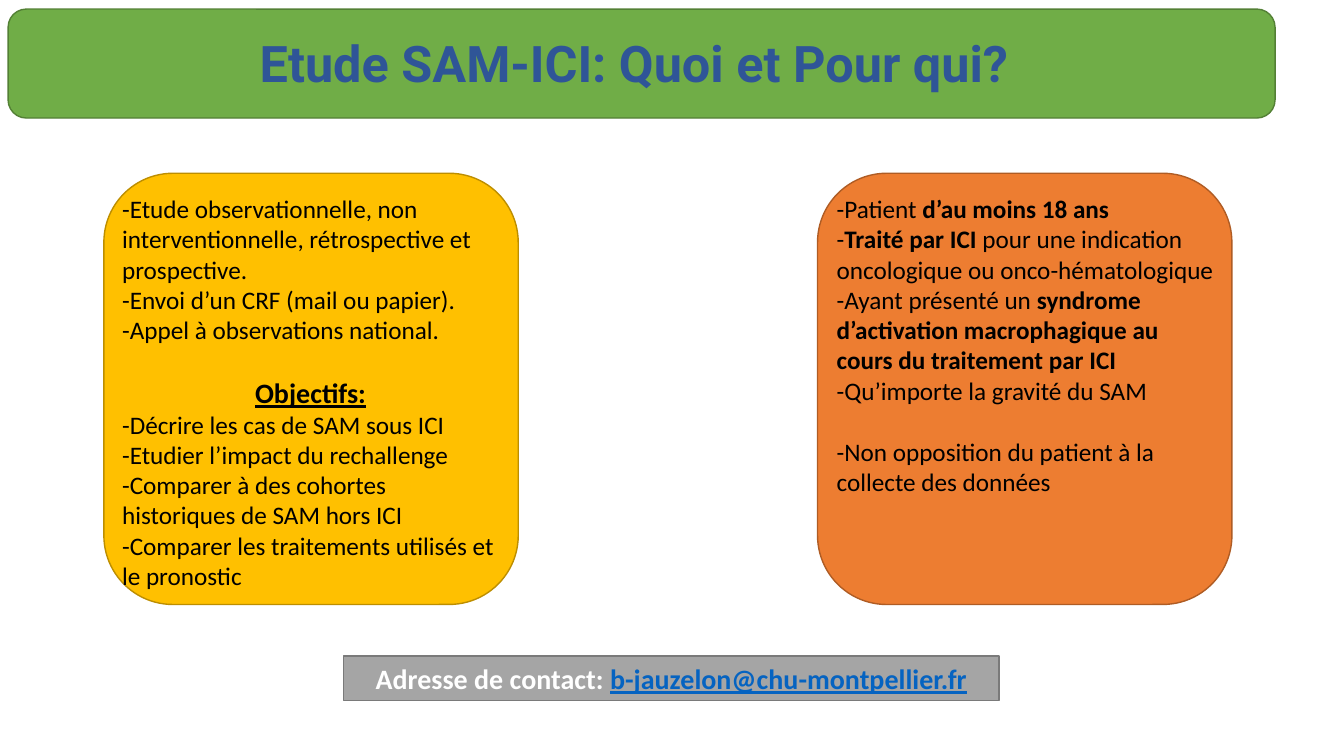
from dataclasses import dataclass

from lxml import etree
from pptx import Presentation, util as u
from pptx.dml.color import RGBColor
from pptx.enum import shapes, text
from pptx.oxml import ns

BLACK = RGBColor(0x00, 0x00, 0x00)
WHITE = RGBColor(0xFF, 0xFF, 0xFF)
TITLE_BLUE = RGBColor(0x2F, 0x55, 0x97)
LINK_BLUE = RGBColor(0x05, 0x63, 0xC1)
GREEN, GREEN_EDGE = RGBColor(0x70, 0xAD, 0x47), RGBColor(0x53, 0x80, 0x35)
YELLOW, YELLOW_EDGE = RGBColor(0xFF, 0xC0, 0x00), RGBColor(0xBD, 0x8E, 0x00)
ORANGE, ORANGE_EDGE = RGBColor(0xED, 0x7D, 0x31), RGBColor(0xAF, 0x5C, 0x24)
GREY, GREY_EDGE = RGBColor(0xA5, 0xA5, 0xA5), RGBColor(0x7A, 0x7A, 0x7A)
CARD_TOP, CARD_WIDTH, CARD_HEIGHT = 123.8, 296, 308
SECTION_GAP = 22


@dataclass(frozen=True)
class Line:
    """One paragraph; every second part of its text, split at *, is bold."""
    marked: str
    size: float = 18
    heading: bool = False
    gap: float = 0


@dataclass(frozen=True)
class Card:
    left: float
    text_left: float
    text_width: float
    fill: RGBColor
    edge: RGBColor
    lines: tuple[Line, ...]


CARDS = (
    Card(74.2, 80, 283.7, YELLOW, YELLOW_EDGE, (
        Line("-Etude observationnelle, non interventionnelle, rétrospective et prospective."),
        Line("-Envoi d’un CRF (mail ou papier)."),
        Line("-Appel à observations national."),
        Line("*Objectifs:*", size=20, heading=True, gap=SECTION_GAP),
        Line("-Décrire les cas de SAM sous ICI"),
        Line("-Etudier l’impact du rechallenge"),
        Line("-Comparer à des cohortes historiques de SAM hors ICI"),
        Line("-Comparer les traitements utilisés et le pronostic"),
    )),
    Card(584, 590.4, 288.7, ORANGE, ORANGE_EDGE, (
        Line("-Patient *d’au moins 18 ans*"),
        Line("-*Traité par ICI *pour une indication oncologique ou onco-hématologique"),
        Line("-Ayant présenté un *syndrome d’activation macrophagique au cours "
             "du traitement par ICI*"),
        Line("-Qu’importe la gravité du SAM"),
        Line("-Non opposition du patient à la collecte des données", gap=SECTION_GAP),
    )),
)


def write(paragraph, words: str, *, size: float = 18, color: RGBColor = BLACK,
          font: str = "Calibri", bold: bool = False, underline: bool = False) -> None:
    run = paragraph.add_run()
    run.text = words
    run.font.name = font
    run.font.size = u.Pt(size)
    run.font.color.rgb = color
    run.font.bold = bold
    run.font.underline = underline


def add_panel(slide, kind, left: float, top: float, width: float, height: float,
              fill: RGBColor, edge: RGBColor):
    panel = slide.shapes.add_shape(kind, u.Pt(left), u.Pt(top), u.Pt(width), u.Pt(height))
    panel.shadow.inherit = False
    panel.fill.solid()
    panel.fill.fore_color.rgb = fill
    panel.line.color.rgb = edge
    panel.line.width = u.Pt(1)
    return panel


def place(placeholder, left: float, top: float, width: float, height: float):
    """Move a placeholder to its box, in front of the panels drawn so far."""
    placeholder.left, placeholder.top = u.Pt(left), u.Pt(top)
    placeholder.width, placeholder.height = u.Pt(width), u.Pt(height)
    placeholder.element.getparent().append(placeholder.element)
    frame = placeholder.text_frame
    frame.word_wrap = True
    frame.auto_size = text.MSO_AUTO_SIZE.NONE
    return frame


def remove_bullet(paragraph) -> None:
    properties = paragraph._p.get_or_add_pPr()
    properties.set("marL", "0")
    properties.set("indent", "0")
    etree.SubElement(properties, ns.qn("a:buNone"))


def fill_list(frame, lines: tuple[Line, ...]) -> None:
    for index, line in enumerate(lines):
        paragraph = frame.add_paragraph() if index else frame.paragraphs[0]
        remove_bullet(paragraph)
        paragraph.space_before = u.Pt(line.gap)
        paragraph.alignment = text.PP_ALIGN.CENTER if line.heading else text.PP_ALIGN.LEFT
        for part, words in enumerate(line.marked.split("*")):
            if words:
                write(paragraph, words, size=line.size, bold=part % 2 == 1,
                      underline=line.heading)


def main() -> None:
    deck = Presentation()
    deck.slide_width, deck.slide_height = u.Pt(960), u.Pt(540)
    slide = deck.slides.add_slide(deck.slide_layouts.get_by_name("Two Content"))
    title, *bodies = slide.placeholders
    rounded = shapes.MSO_SHAPE.ROUNDED_RECTANGLE

    add_panel(slide, rounded, 5.8, 6.5, 905, 77.8, GREEN, GREEN_EDGE)
    heading = place(title, 15, 19.4, 876, 51).paragraphs[0]
    heading.alignment = text.PP_ALIGN.CENTER
    write(heading, "Etude SAM-ICI: Quoi et Pour qui?", size=36, color=TITLE_BLUE,
          font="Roboto", bold=True)

    for card, body in zip(CARDS, bodies):
        add_panel(slide, rounded, card.left, CARD_TOP, CARD_WIDTH, CARD_HEIGHT,
                  card.fill, card.edge)
        frame = place(body, card.text_left, 134.6, card.text_width, 315)
        fill_list(frame, card.lines)

    contact_bar = add_panel(slide, shapes.MSO_SHAPE.RECTANGLE, 245.5, 468.7, 468, 31.7,
                            GREY, GREY_EDGE)
    contact = contact_bar.text_frame.paragraphs[0]
    contact.alignment = text.PP_ALIGN.CENTER
    write(contact, "Adresse de contact: ", size=20, color=WHITE, bold=True)
    write(contact, "b-jauzelon@chu-montpellier.fr", size=20, color=LINK_BLUE, bold=True,
          underline=True)

    deck.save("out.pptx")


if __name__ == "__main__":
    main()
